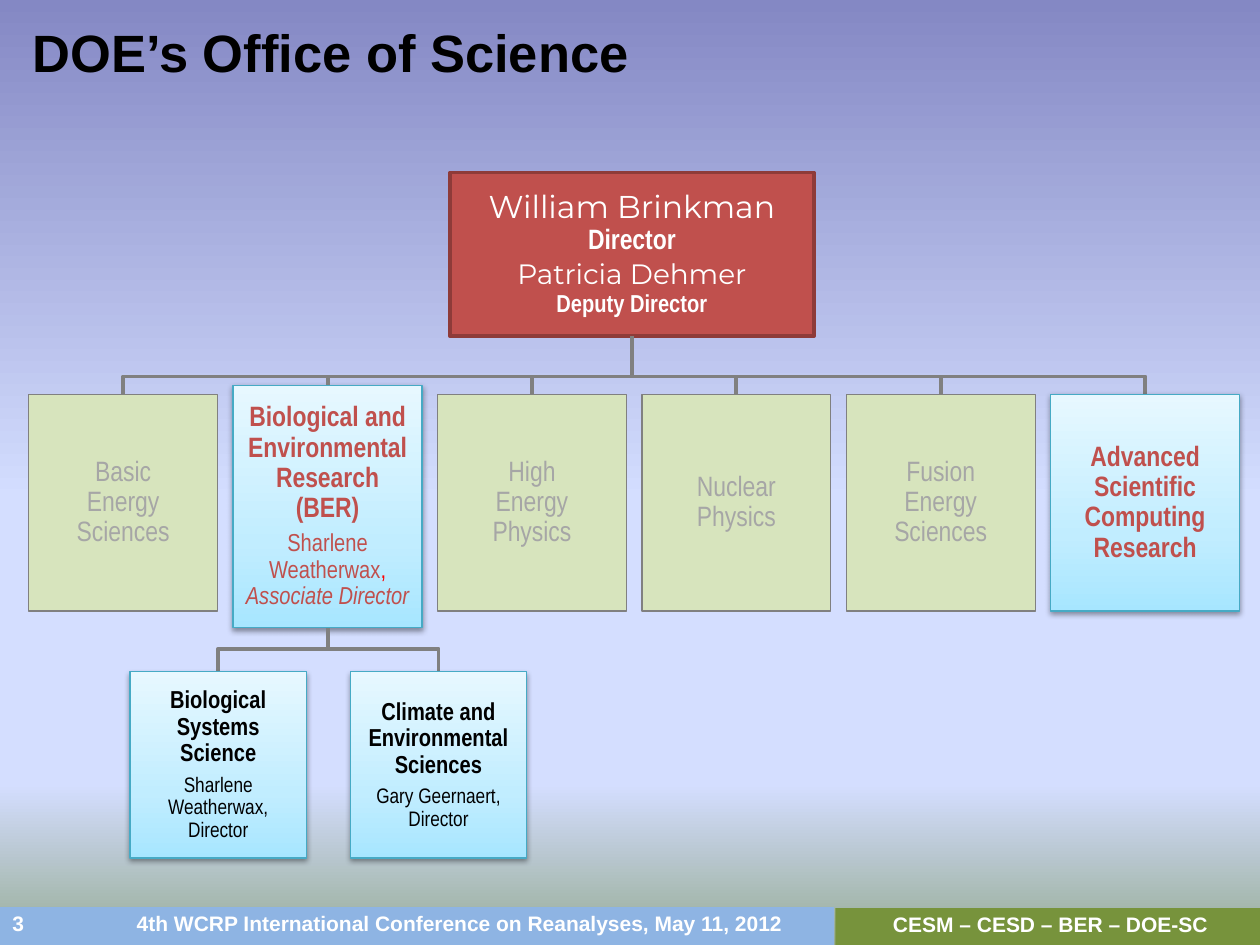
import copy
from dataclasses import dataclass

import pptx
import pptx.dml.color
import pptx.enum.shapes
import pptx.enum.text
import pptx.oxml
import pptx.oxml.ns
import pptx.util
from pptx.util import Cm

A_NS = 'xmlns:a="http://schemas.openxmlformats.org/drawingml/2006/main"'
ALIGN = pptx.enum.text.PP_ALIGN
ANCHOR = pptx.enum.text.MSO_ANCHOR
qn = pptx.oxml.ns.qn

# Content: box -> paragraphs -> (text, style) runs
TITLE = "DOE’s Office of Science"
PAGE_AND_EVENT = "3\t4th WCRP International Conference on Reanalyses, May 11, 2012"
PROGRAMME = " CESM – CESD – BER – DOE-SC"

LEADERS = [
    [("William Brinkman\n", "director name"), ("Director", "director role")],
    [("Patricia Dehmer\n", "deputy name"), ("Deputy Director", "deputy role")],
]
OFFICES = [
    ("muted", [[("Basic\nEnergy\nSciences", "muted")]]),
    ("bright", [
        [("Biological and Environmental Research (BER)", "office")],
        [("Sharlene Weatherwax", "officer"), (",\n", "comma"),
         ("Associate Director", "officer role")],
    ]),
    ("muted", [[("High\nEnergy\nPhysics", "muted")]]),
    ("muted", [[("Nuclear\nPhysics", "muted")]]),
    ("muted", [[("Fusion\nEnergy\nSciences", "muted")]]),
    ("bright", [[("Advanced\nScientific\nComputing\nResearch", "office")]]),
]
BER = 1  # index of the office that has divisions below it
DIVISIONS = [
    [[("Biological Systems Science", "division")],
     [("Sharlene Weatherwax,\nDirector", "division head")]],
    [[("Climate and Environmental Sciences", "division")],
     [("Gary Geernaert,\nDirector", "division head")]],
]


@dataclass
class Style:
    size: int
    font: str
    color: str
    bold: bool = False
    italic: bool = False


class Theme:
    background = [(0, "8488C4"), (53, "D4DEFF"), (83, "D4DEFF"), (100, "96AB94")]
    bright = [(0, "A7E6FF"), (35, "C1EDFF"), (100, "E7F8FF")]
    event_bar, programme_bar = "8EB4E3", "77933C"
    connector, connector_width = "808080", 2.25
    # kind: (fill, line colour, line width)
    boxes = {
        "leaders": ("C0504D", "8E3B39", 2),
        "muted": ("D7E4BD", "808080", 0.75),
        "bright": (bright, "46AAC5", 0.75),
    }
    text = {
        "title": Style(30, "Arial", "000000", True),
        "footer": Style(12, "Arial", "FFFFFF", True),
        "director name": Style(18, "Montserrat", "FFFFFF"),
        "director role": Style(16, "Arial Narrow", "FFFFFF", True),
        "deputy name": Style(16, "Montserrat", "FFFFFF"),
        "deputy role": Style(14, "Arial Narrow", "FFFFFF", True),
        "muted": Style(16, "Arial Narrow", "A6A6A6"),
        "office": Style(16, "Arial Narrow", "C0504D", True),
        "officer": Style(14, "Arial Narrow", "C0504D"),
        "comma": Style(14, "Arial Narrow", "FF0000"),
        "officer role": Style(14, "Arial Narrow", "C0504D", italic=True),
        "division": Style(14, "Arial Narrow", "000000", True),
        "division head": Style(12, "Arial Narrow", "000000"),
    }


def rgb(color):
    return pptx.dml.color.RGBColor.from_string(color)


def set_gradient(fill, owner, stops, angle):
    fill.gradient()
    gradient = next(owner.iter(qn("a:gradFill")))
    for child in list(gradient):
        gradient.remove(child)
    stop_xml = "".join(
        f'<a:gs pos="{pos * 1000}"><a:srgbClr val="{color}"/></a:gs>' for pos, color in stops)
    gradient.append(pptx.oxml.parse_xml(f"<a:gsLst {A_NS}>{stop_xml}</a:gsLst>"))
    gradient.append(pptx.oxml.parse_xml(f'<a:lin {A_NS} ang="{angle * 60000}" scaled="0"/>'))


def add_text(paragraph, text, style_name):
    style = Theme.text[style_name]
    for i, line in enumerate(text.split("\n")):
        if i:  # a line break takes the format of the run before it
            paragraph.add_line_break()
            line_break = paragraph._p.findall(qn("a:br"))[-1]
            line_break.append(copy.deepcopy(run.font._element))
        if not line:
            continue
        run = paragraph.add_run()
        run.text = line
        run.font.size, run.font.name = pptx.util.Pt(style.size), style.font
        run.font.bold, run.font.italic = style.bold, style.italic
        run.font.color.rgb = rgb(style.color)


def add_rect(slide, left, top, width, height, fill):
    rect = slide.shapes.add_shape(
        pptx.enum.shapes.MSO_SHAPE.RECTANGLE, Cm(left), Cm(top), Cm(width), Cm(height))
    rect.shadow.inherit = False
    if isinstance(fill, list):
        set_gradient(rect.fill, rect.element, fill, 270)
    else:
        rect.fill.solid()
        rect.fill.fore_color.rgb = rgb(fill)
    return rect


def add_box(slide, kind, paragraphs, place, space_before=4):
    fill, line_color, line_width = Theme.boxes[kind]
    box = add_rect(slide, *place, fill)
    box.line.color.rgb = rgb(line_color)
    box.line.width = pptx.util.Pt(line_width)
    if kind == "bright":
        box.element.spPr.find(qn("a:effectLst")).append(pptx.oxml.parse_xml(
            f'<a:outerShdw {A_NS} blurRad="40000" dist="20000" dir="5400000" rotWithShape="0">'
            '<a:srgbClr val="000000"><a:alpha val="38000"/></a:srgbClr></a:outerShdw>'))
    frame = box.text_frame
    frame.word_wrap = kind != "leaders"
    frame.vertical_anchor = ANCHOR.MIDDLE
    for i, runs in enumerate(paragraphs):
        paragraph = frame.add_paragraph() if i else frame.paragraphs[0]
        paragraph.alignment = ALIGN.CENTER
        paragraph.line_spacing = 0.9
        paragraph.space_before = pptx.util.Pt(space_before)
        for text, style_name in runs:
            add_text(paragraph, text, style_name)
    return box


def add_footer(slide, left, top, width, height, fill, text, alignment):
    bar = add_rect(slide, left, top, width, height, fill)
    bar.line.fill.background()
    bar.text_frame.word_wrap = True
    bar.text_frame.vertical_anchor = ANCHOR.TOP
    paragraph = bar.text_frame.paragraphs[0]
    paragraph.alignment, paragraph.line_spacing = alignment, 0.9
    add_text(paragraph, text, "footer")
    return bar


def style_line(shape):
    shape.line.color.rgb = rgb(Theme.connector)
    shape.line.width = pptx.util.Pt(Theme.connector_width)


def add_bracket(slide, left, right, top, foot):
    builder = slide.shapes.build_freeform(Cm(left), Cm(foot))
    builder.add_line_segments(
        [(Cm(left), Cm(top)), (Cm(right), Cm(top)), (Cm(right), Cm(foot))], close=False)
    bracket = builder.convert_to_shape()
    bracket.shadow.inherit = False
    bracket.fill.background()
    style_line(bracket)


def add_stem(slide, box, side, bus):
    """Join the top (0) or bottom (2) of a box to a bus height."""
    x = box.left + box.width // 2
    stem = slide.shapes.add_connector(
        pptx.enum.shapes.MSO_CONNECTOR.STRAIGHT, x, Cm(bus), x, Cm(bus))
    stem.end_connect(box, side)
    stem.element.spPr.append(pptx.oxml.parse_xml(f"<a:effectLst {A_NS}/>"))
    style_line(stem)


def main():
    deck = pptx.Presentation()
    deck.slide_width, deck.slide_height = Cm(25.4), Cm(19.05)
    slide = deck.slides.add_slide(deck.slide_layouts[5])
    set_gradient(slide.background.fill, slide.element, Theme.background, 90)

    # Title
    title = slide.shapes.title
    title.left, title.top, title.width, title.height = Cm(0.41), Cm(0.48), Cm(22.86), Cm(1.35)
    title.text_frame.auto_size = pptx.enum.text.MSO_AUTO_SIZE.SHAPE_TO_FIT_TEXT
    title.text_frame.vertical_anchor = ANCHOR.TOP
    heading = title.text_frame.paragraphs[0]
    heading.alignment, heading.line_spacing = ALIGN.LEFT, 0.85
    add_text(heading, TITLE, "title")

    # Footer bars
    event = add_footer(slide, 0, 18.29, 16.81, 0.76, Theme.event_bar, PAGE_AND_EVENT, ALIGN.LEFT)
    event.text_frame.paragraphs[0]._p.get_or_add_pPr().append(pptx.oxml.parse_xml(
        f'<a:tabLst {A_NS}><a:tab pos="{Cm(9.02)}" algn="ctr"/></a:tabLst>'))
    programme = add_footer(
        slide, 16.84, 18.31, 8.56, 0.74, Theme.programme_bar, PROGRAMME, ALIGN.CENTER)
    programme.text_frame.margin_left = programme.text_frame.margin_right = 0

    # Brackets, behind the boxes
    office_left, office_pitch, office_width = 0.58, 4.12, 3.81
    division_left, division_pitch, division_width = 2.62, 4.44, 3.56
    office_bus, division_bus = 7.59, 13.08
    for left, pitch, width, count, bus in (
            (office_left, office_pitch, office_width, len(OFFICES), office_bus),
            (division_left, division_pitch, division_width, len(DIVISIONS), division_bus)):
        first = left + width / 2
        add_bracket(slide, first, first + (count - 1) * pitch, bus, bus + 0.68)

    # Boxes
    leaders = add_box(slide, "leaders", LEADERS, (9.07, 3.48, 7.34, 3.3), space_before=3)
    offices = []
    for i, (kind, paragraphs) in enumerate(OFFICES):
        top, height = (7.77, 4.88) if i == BER else (7.95, 4.37)
        place = (office_left + i * office_pitch, top, office_width, height)
        offices.append(add_box(slide, kind, paragraphs, place))
    for i, paragraphs in enumerate(DIVISIONS):
        place = (division_left + i * division_pitch, 13.54, division_width, 3.76)
        add_box(slide, "bright", paragraphs, place)

    # Stems between the boxes and the brackets
    add_stem(slide, leaders, 2, office_bus)
    for office in offices[1:-1]:
        add_stem(slide, office, 0, office_bus)
    add_stem(slide, offices[BER], 2, division_bus)

    deck.save("out.pptx")


if __name__ == "__main__":
    main()
